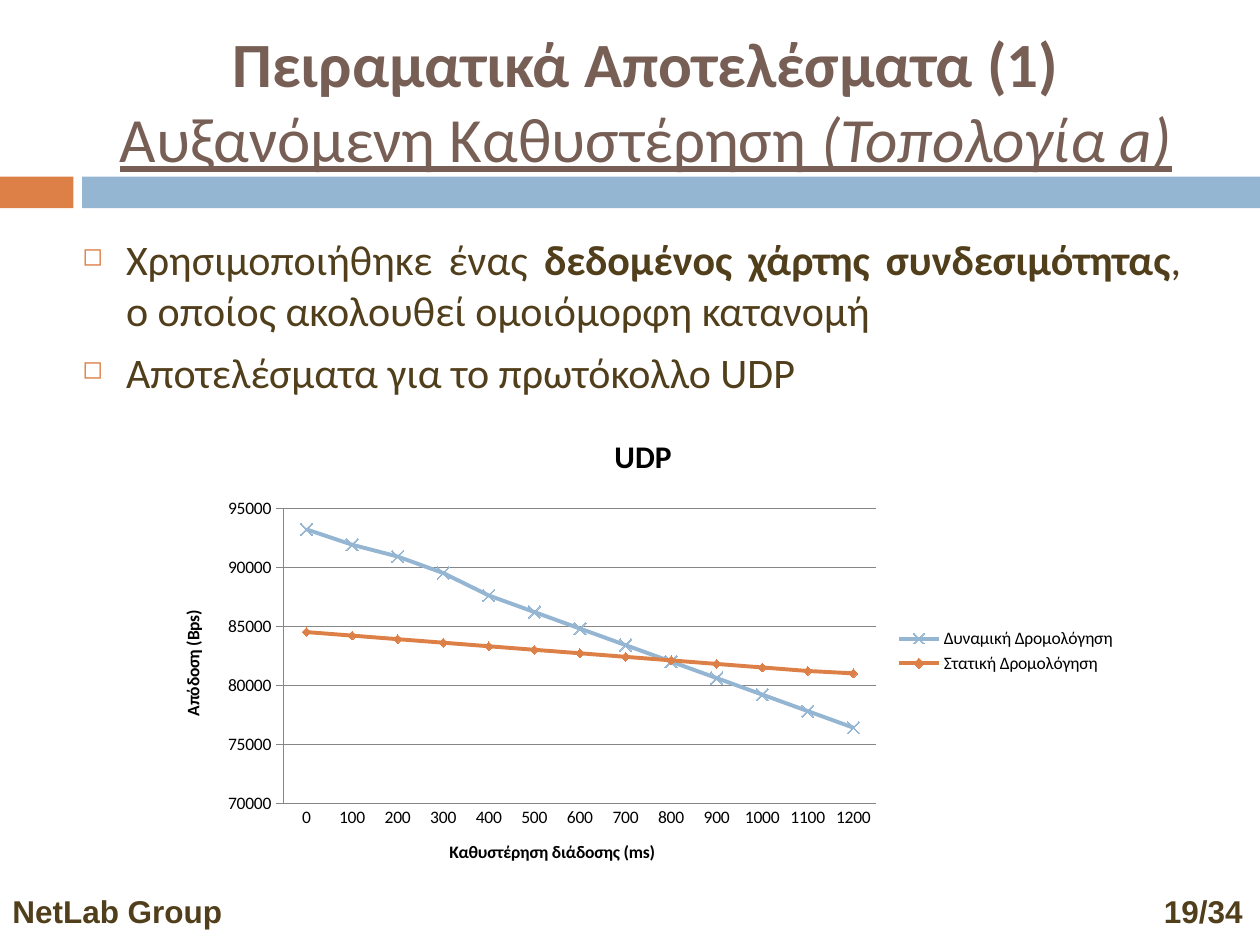
import dataclasses

import lxml.etree
import pptx
import pptx.chart.data
import pptx.dml.color
import pptx.enum.chart
import pptx.enum.shapes
import pptx.enum.text
import pptx.oxml
import pptx.oxml.ns
import pptx.util

Pt = pptx.util.Pt
qn = pptx.oxml.ns.qn
Align = pptx.enum.text.PP_ALIGN
Anchor = pptx.enum.text.MSO_ANCHOR
Tick = pptx.enum.chart.XL_TICK_MARK
Marker = pptx.enum.chart.XL_MARKER_STYLE


@dataclasses.dataclass(frozen=True)
class Theme:
    """Colours, fonts and type sizes of the deck."""
    blue: str = "94B6D2"
    orange: str = "DD8047"
    heading: str = "775F55"
    text: str = "513E1B"
    black: str = "000000"
    grid: str = "868686"
    font: str = "Calibri"
    footer_font: str = "Arial"
    title_size: int = 36
    body_size: int = 24
    footer_size: int = 18
    chart_title_size: int = 18
    chart_size: int = 10


THEME = Theme()


def colour(value):
    """Turn a hex string into a colour."""
    return pptx.dml.color.RGBColor.from_string(value)


def style_font(font, size, value, name=THEME.font, bold=False, italic=False, underline=False):
    """Apply a full text format to a font."""
    font.name, font.size, font.bold = name, Pt(size), bold
    font.italic, font.underline = italic, underline
    font.color.rgb = colour(value)


def add_span(para, text, **style):
    """Append formatted text to a paragraph."""
    span = para.add_run()
    span.text = text
    style_font(span.font, **style)


def add_text_box(page, box, anchor=Anchor.TOP):
    """Add a wrapping text box and return its frame."""
    frame = page.shapes.add_textbox(*map(Pt, box)).text_frame
    frame.word_wrap = True
    frame.vertical_anchor = anchor
    return frame


def add_title(page, box):
    """Place the two-line slide title."""
    para = add_text_box(page, box, Anchor.MIDDLE).paragraphs[0]
    para.alignment = Align.CENTER
    style = dict(size=THEME.title_size, value=THEME.heading)
    add_span(para, "Πειραματικά Αποτελέσματα (1)", bold=True, **style)
    para.add_line_break()
    add_span(para, "Αυξανόμενη Καθυστέρηση ", underline=True, **style)
    add_span(para, "(Τοπολογία a)", underline=True, italic=True, **style)


def add_band(page, box):
    """Place the orange and blue bars under the title."""
    left, top, width, height = box
    orange_width, gap = 42, 5
    blue_left = orange_width + gap
    for start, length, fill in ((0, orange_width, THEME.orange),
                                (blue_left, width - blue_left, THEME.blue)):
        bar = page.shapes.add_shape(pptx.enum.shapes.MSO_SHAPE.RECTANGLE,
                                    Pt(left + start), Pt(top), Pt(length), Pt(height))
        bar.shadow.inherit = False
        bar.fill.solid()
        bar.fill.fore_color.rgb = colour(fill)
        bar.line.fill.background()


def add_bullet(para):
    """Give a paragraph a hanging square bullet."""
    properties = para._p.get_or_add_pPr()
    properties.set("marL", str(Pt(25)))
    properties.set("indent", str(-Pt(25)))
    bullet_colour = lxml.etree.SubElement(properties, qn("a:buClr"))
    lxml.etree.SubElement(bullet_colour, qn("a:srgbClr"), val=THEME.orange)
    lxml.etree.SubElement(properties, qn("a:buSzPct"), val="60000")
    lxml.etree.SubElement(properties, qn("a:buChar"), char="◻")


def add_body(page, box):
    """Place the justified bullet list."""
    frame = add_text_box(page, box)
    items = (
        (("Χρησιμοποιήθηκε ένας ", False),
         ("δεδομένος χάρτης συνδεσιμότητας", True),
         (", ο οποίος ακολουθεί ομοιόμορφη κατανομή", False)),
        (("Αποτελέσματα για το πρωτόκολλο UDP", False),),
    )
    for index, item in enumerate(items):
        para = frame.add_paragraph() if index else frame.paragraphs[0]
        para.alignment = Align.JUSTIFY
        para.space_before = Pt(7)
        add_bullet(para)
        for text, bold in item:
            add_span(para, text, size=THEME.body_size, value=THEME.text, bold=bold)


def set_chart_title(owner, text, size):
    """Give a chart or an axis a bold title."""
    para = owner.text_frame.paragraphs[0]
    add_span(para, text, size=size, value=THEME.black, bold=True)


def style_line(line, value, width):
    """Set the colour and width of a line."""
    line.color.rgb = colour(value)
    line.width = Pt(width)


def set_plot_layout(chart, **fractions):
    """Fix the inner plot area as fractions of the chart."""
    area = chart._chartSpace.chart.plotArea
    for old in area.findall(qn("c:layout")):
        area.remove(old)
    layout = lxml.etree.Element(qn("c:layout"))
    manual = lxml.etree.SubElement(layout, qn("c:manualLayout"))
    settings = dict(layoutTarget="inner", xMode="edge", yMode="edge", **fractions)
    for name, value in settings.items():
        lxml.etree.SubElement(manual, qn(f"c:{name}"), val=str(value))
    area.insert(0, layout)


def add_delay_chart(page, box):
    """Place the line chart of throughput against delay."""
    data = pptx.chart.data.CategoryChartData(number_format="0")
    data.categories = [str(delay) for delay in range(0, 1201, 100)]
    data.add_series("Δυναμική Δρομολόγηση", (
        93200, 91900, 90900, 89500, 87600, 86200, 84800,
        83400, 82000, 80600, 79200, 77800, 76400))
    data.add_series("Στατική Δρομολόγηση", (
        84500, 84200, 83900, 83600, 83300, 83000, 82700,
        82400, 82100, 81800, 81500, 81200, 81000))
    chart = page.shapes.add_chart(pptx.enum.chart.XL_CHART_TYPE.LINE_MARKERS,
                                  *map(Pt, box), data).chart
    style_font(chart.font, THEME.chart_size, THEME.black)
    chart.has_title = True
    set_chart_title(chart.chart_title, "UDP", THEME.chart_title_size)
    chart.has_legend = True
    chart.legend.position = pptx.enum.chart.XL_LEGEND_POSITION.RIGHT
    chart.legend.include_in_layout = False
    chart.plots[0].vary_by_categories = False
    set_plot_layout(chart, x=0.13, y=0.2, w=0.61, h=0.62)

    axes = ((chart.category_axis, "Καθυστέρηση διάδοσης (ms)", Tick.NONE),
            (chart.value_axis, "Απόδοση (Bps)", Tick.CROSS))
    for axis, title, tick in axes:
        set_chart_title(axis.axis_title, title, THEME.chart_size)
        axis.major_tick_mark, axis.minor_tick_mark = tick, Tick.NONE
        style_line(axis.format.line, THEME.grid, 0.75)
    scale = chart.value_axis
    scale.minimum_scale, scale.maximum_scale, scale.major_unit = 70000, 95000, 5000
    scale.tick_labels.number_format = "0"
    scale.tick_labels.number_format_is_linked = False
    style_line(scale.major_gridlines.format.line, THEME.grid, 0.75)

    looks = ((THEME.blue, Marker.X, 7), (THEME.orange, Marker.DIAMOND, 5))
    for series, (value, marker, size) in zip(chart.series, looks):
        series.smooth = False
        style_line(series.format.line, value, 2.25)
        series.marker.style, series.marker.size = marker, size
        series.marker.format.fill.solid()
        series.marker.format.fill.fore_color.rgb = colour(value)
        style_line(series.marker.format.line, value, 0.75)


def add_footer(page, box):
    """Place the group name and the page number at opposite ends."""
    para = add_text_box(page, box).paragraphs[0]
    tabs = lxml.etree.SubElement(para._p.get_or_add_pPr(), qn("a:tabLst"))
    lxml.etree.SubElement(tabs, qn("a:tab"), pos=str(Pt(box[2] - 17)), algn="r")
    add_span(para, "NetLab Group\t19/34", size=THEME.footer_size, value=THEME.text,
             name=THEME.footer_font, bold=True)


def main():
    """Build and save the slide."""
    deck = pptx.Presentation()
    deck.slide_width, deck.slide_height = Pt(720), Pt(540)
    page = deck.slides.add_slide(deck.slide_layouts[6])
    add_band(page, (0, 101, 720, 18))
    add_title(page, (48, 18, 642, 78))
    add_body(page, (40, 130, 642, 100))
    add_delay_chart(page, (90, 236, 555, 272))
    add_footer(page, (0, 506, 720, 29))
    deck.save("out.pptx")


if __name__ == "__main__":
    main()
